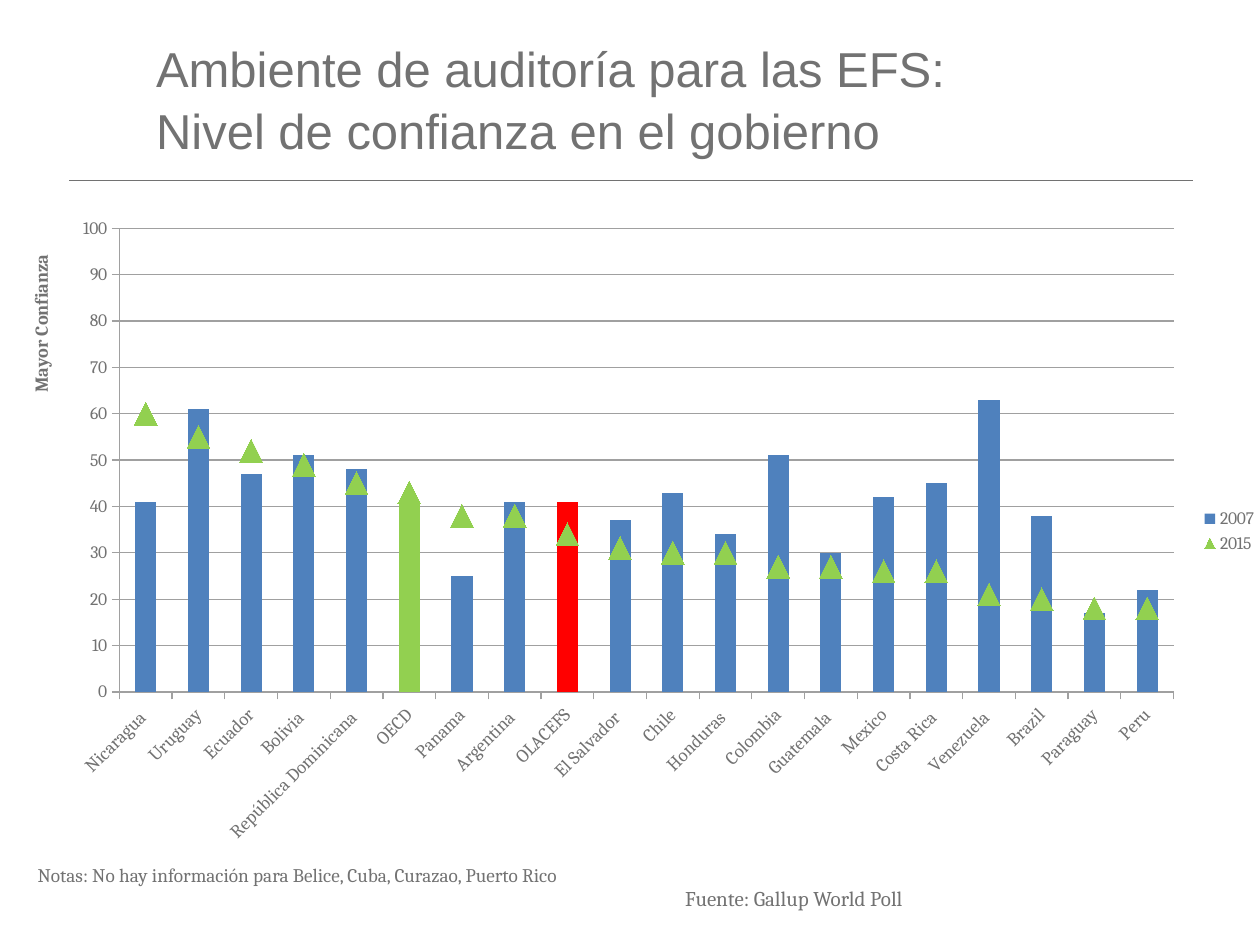
from lxml import etree
from pptx import Presentation
from pptx.chart.data import CategoryChartData
from pptx.dml.color import RGBColor
from pptx.enum import chart as ch, shapes, text
from pptx.oxml import parse_xml
from pptx.oxml.ns import nsdecls, qn
from pptx.util import Pt

GREY, GRID, BLUE, GREEN, RED = "727272", "A0A0A0", "4F81BD", "92D050", "FF0000"
BODY = "Cambria"

TITLE = "Ambiente de auditoría para las EFS:\vNivel de confianza en el gobierno"
TRUST = [  # country, 2007, 2015
    ("Nicaragua ", 41, 60), ("Uruguay", 61, 55), ("Ecuador", 47, 52),
    ("Bolivia ", 51, 49), ("República Dominicana ", 48, 45), ("OECD", 41, 43),
    ("Panama", 25, 38), ("Argentina ", 41, 38), ("OLACEFS", 41, 34),
    ("El Salvador ", 37, 31), ("Chile", 43, 30), ("Honduras ", 34, 30),
    ("Colombia", 51, 27), ("Guatemala ", 30, 27), ("Mexico", 42, 26),
    ("Costa Rica ", 45, 26), ("Venezuela ", 63, 21), ("Brazil", 38, 20),
    ("Paraguay", 17, 18), ("Peru", 22, 18),
]
HIGHLIGHTS = {"OECD": GREEN, "OLACEFS": RED}
FOOTERS = [  # text, size, left, top, width, height
    ("Fuente: Gallup World Poll", 12, 384.5, 502.5, 163, 22),
    ("Notas: No hay información para Belice, Cuba, Curazao, Puerto Rico",
     11, 14.4, 489.6, 468, 21),
]


def rgb(value):
    return RGBColor.from_string(value)


def style(font, size, name=BODY, color=GREY, bold=False):
    font.size, font.name, font.bold = Pt(size), name, bold
    font.color.rgb = rgb(color)


def fill(part, color):
    part.fill.solid()
    part.fill.fore_color.rgb = rgb(color)


def outline(line, color, width=0.75):
    line.color.rgb = rgb(color)
    line.width = Pt(width)


def place(part, x, y, w=None, h=None, inner=False):
    """Set a manual layout, in fractions of the chart, on a chart element."""
    for old in part.findall(qn("c:layout")):
        part.remove(old)
    target = '<c:layoutTarget val="inner"/>' if inner else ""
    sizes = "".join(f'<c:{k} val="{v}"/>' for k, v in (("x", x), ("y", y), ("w", w), ("h", h))
                    if v is not None)
    layout = parse_xml(f'<c:layout {nsdecls("c")}><c:manualLayout>{target}'
                       f'<c:xMode val="edge"/><c:yMode val="edge"/>{sizes}'
                       '</c:manualLayout></c:layout>')
    before = part.find(qn("c:tx"))
    if before is None:
        before = part.find(qn("c:legendPos"))
    if before is None:
        part.insert(0, layout)
    else:
        before.addnext(layout)


def move_last_series_to_line(chart):
    """Turn the last column series into a line plot on the same axes."""
    columns = chart.plots[0]._element
    series = columns.findall(qn("c:ser"))[-1]
    for flag in series.findall(qn("c:invertIfNegative")):
        series.remove(flag)
    lines = parse_xml(f'<c:lineChart {nsdecls("c")}><c:grouping val="stacked"/>'
                      '<c:varyColors val="0"/><c:marker val="1"/></c:lineChart>')
    lines.insert(2, series)
    for axis in columns.findall(qn("c:axId")):
        etree.SubElement(lines, qn("c:axId")).set("val", axis.get("val"))
    columns.addnext(lines)


def add_trust_chart(slide):
    data = CategoryChartData()
    data.categories = [country for country, *_ in TRUST]
    for column, year in enumerate(("2007", "2015"), 1):
        data.add_series(year, [row[column] for row in TRUST])
    chart = slide.shapes.add_chart(ch.XL_CHART_TYPE.COLUMN_CLUSTERED, Pt(0), Pt(117.4),
                                   Pt(725.8), Pt(372.2), data).chart
    style(chart.font, 10)
    chart.has_title = False
    move_last_series_to_line(chart)
    columns, markers = chart.plots
    columns.gap_width = 150
    columns.vary_by_categories = False

    bars = columns.series[0]
    fill(bars.format, BLUE)
    for index, (country, *_) in enumerate(TRUST):
        if country in HIGHLIGHTS:
            fill(bars.points[index].format, HIGHLIGHTS[country])

    triangles = markers.series[0]
    triangles.smooth = False
    triangles.format.line.fill.background()
    triangles.marker.style = ch.XL_MARKER_STYLE.TRIANGLE
    triangles.marker.size = 13
    fill(triangles.marker.format, GREEN)
    triangles.marker.format.line.fill.background()

    countries, trust = chart.category_axis, chart.value_axis
    for axis in (countries, trust):
        axis.major_tick_mark = ch.XL_TICK_MARK.OUTSIDE
        axis.minor_tick_mark = ch.XL_TICK_MARK.NONE
        outline(axis.format.line, GRID)
    style(countries.tick_labels.font, 10.5)
    countries._element.find(qn("c:txPr")).find(qn("a:bodyPr")).set("rot", "-2700000")
    style(trust.tick_labels.font, 10)
    trust.minimum_scale, trust.maximum_scale, trust.major_unit = 0, 100, 10
    trust.has_major_gridlines = True
    outline(trust.major_gridlines.format.line, GRID)

    heading = trust.axis_title
    heading.text_frame.text = "Mayor Confianza"
    style(heading.text_frame.paragraphs[0].font, 10.5, bold=True)
    heading._element.find(f'.//{qn("a:bodyPr")}').set("rot", "-5400000")
    place(heading._element, 0.02, 0.07)

    chart.has_legend = True
    chart.legend.position = ch.XL_LEGEND_POSITION.RIGHT
    chart.legend.include_in_layout = False
    style(chart.legend.font, 10)
    place(columns._element.getparent(), 0.094, 0.035, 0.83, 0.712, inner=True)


def main():
    deck = Presentation()
    deck.slide_width, deck.slide_height = Pt(720), Pt(540)
    slide = deck.slides.add_slide(deck.slide_layouts[5])

    rule = slide.shapes.add_connector(shapes.MSO_CONNECTOR.STRAIGHT,
                                      Pt(39.6), Pt(103), Pt(681.8), Pt(103))
    outline(rule.line, GREY, 0.5)
    etree.SubElement(rule._element.spPr, qn("a:effectLst"))

    title = slide.shapes.title
    title.left, title.top, title.width, title.height = Pt(82), Pt(15), Pt(638), Pt(81)
    title.text_frame.text = TITLE
    title.text_frame.vertical_anchor = text.MSO_ANCHOR.MIDDLE
    heading = title.text_frame.paragraphs[0]
    heading.alignment = text.PP_ALIGN.LEFT
    heading.line_spacing = 1.05
    style(heading.font, 28, "Arial")

    for words, size, *box in FOOTERS:
        frame = slide.shapes.add_textbox(*map(Pt, box)).text_frame
        frame.word_wrap = True
        frame.text = words
        style(frame.paragraphs[0].font, size)

    add_trust_chart(slide)
    deck.save("out.pptx")


if __name__ == "__main__":
    main()
